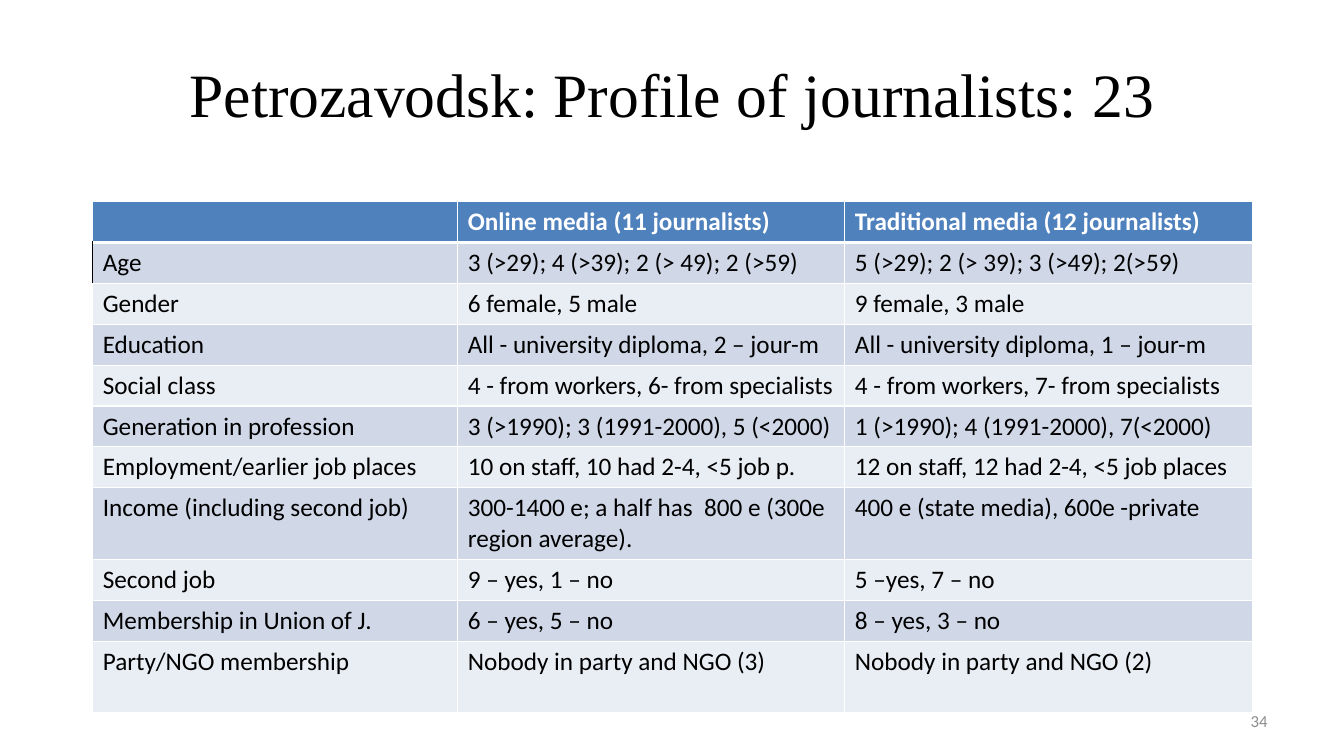
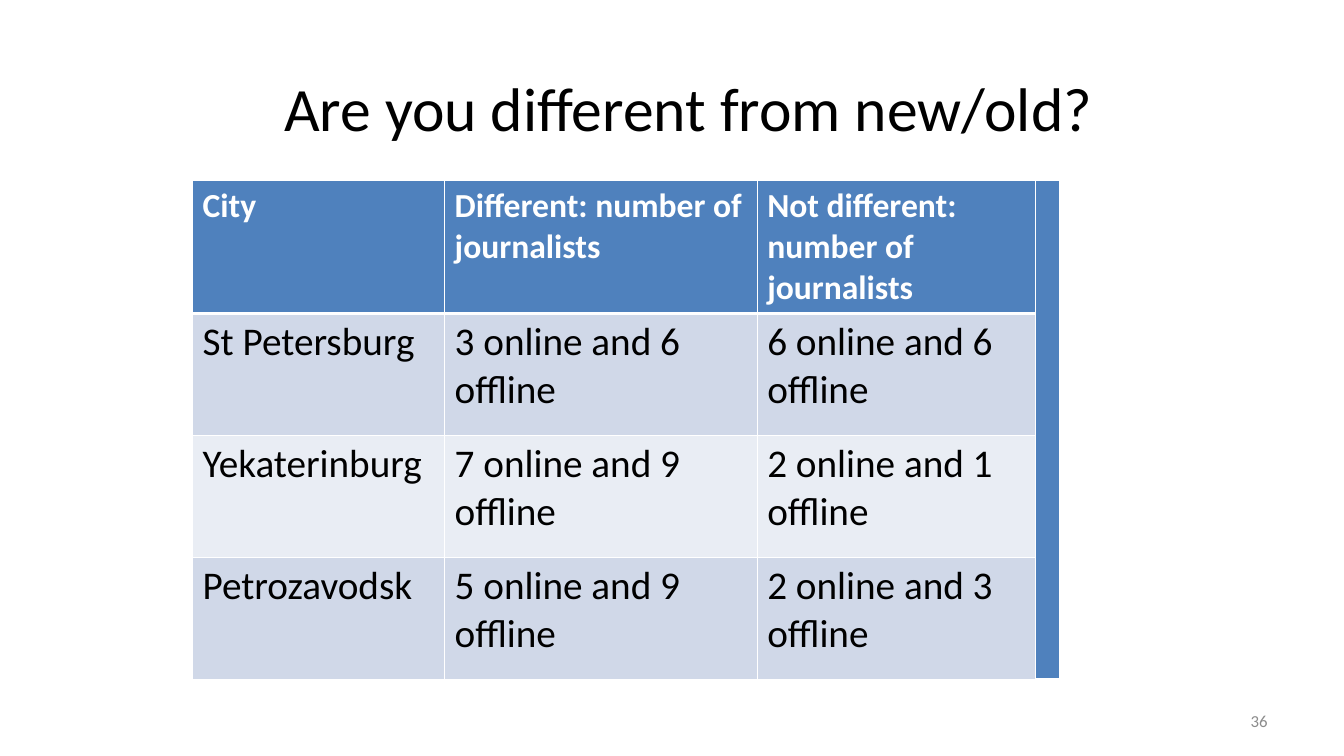
import pptx
import pptx.util
import pptx.dml.color
import pptx.enum.text
import pptx.oxml.ns
from lxml import etree

RGB = pptx.dml.color.RGBColor
ALIGN = pptx.enum.text.PP_ALIGN
WHITE = RGB(0xFF, 0xFF, 0xFF)
BLACK = RGB(0x00, 0x00, 0x00)
GREY = RGB(0x8C, 0x8C, 0x8C)
HEAD = RGB(0x4F, 0x81, 0xBD)
BANDS = [RGB(0xD0, 0xD8, 0xE8), RGB(0xE9, 0xED, 0xF4)]
PX = 9144  # 100 px to the inch
FONT = "Calibri"

# Content
SLIDES = [
    {
        "title": "Petrozavodsk: Profile of journalists: 23",
        "font": "Times New Roman",
        "title_at": (67, 30, 1200, 125),
        "table_at": (92, 200),
        "cols": [362, 384, 404],
        "heights": [40] * 7 + [71, 40, 40, 71],
        "sizes": (18, 18),
        "dark_left": (1, 0),
        "number": "34",
        "rows": [
            ("", "Online media (11 journalists)", "Traditional media (12 journalists)"),
            ("Age", "3 (>29); 4 (>39); 2 (> 49); 2 (>59)", "5 (>29); 2 (> 39); 3 (>49); 2(>59)"),
            ("Gender", "6 female, 5 male", "9 female, 3 male"),
            ("Education", "All - university diploma, 2 – jour-m", "All - university diploma, 1 – jour-m"),
            ("Social class", "4 - from workers, 6- from specialists", "4 - from workers, 7- from specialists"),
            ("Generation in profession", "3 (>1990); 3 (1991-2000), 5 (<2000)", "1 (>1990); 4 (1991-2000), 7(<2000)"),
            ("Employment/earlier job places", "10 on staff, 10 had 2-4, <5 job p.", "12 on staff, 12 had 2-4, <5 job places"),
            ("Income (including second job)", "300-1400 e; a half has  800 e (300e region average).", "400 e (state media), 600e -private"),
            ("Second job", "9 – yes, 1 – no", "5 –yes, 7 – no"),
            ("Membership in Union of J.", "6 – yes, 5 – no", "8 – yes, 3 – no"),
            ("Party/NGO membership", "Nobody in party and NGO (3)", "Nobody in party and NGO (2)"),
        ],
    },
    {
        "title": "Are you different from new/old?",
        "font": FONT,
        "title_at": (83, 44, 1200, 125),
        "table_at": (191, 179),
        "cols": [250, 310, 276, 24],
        "heights": [132, 121, 121, 121],
        "sizes": (24, 28),
        "merge": ((0, 3), (3, 3)),
        "number": "36",
        "rows": [
            ("City", "Different: number of journalists", "Not different: number of journalists"),
            ("St Petersburg", "3 online and 6 offline", "6 online and 6 offline"),
            ("Yekaterinburg", "7 online and 9 offline", "2 online and 1 offline"),
            ("Petrozavodsk", "5 online and 9 offline", "2 online and 3 offline"),
        ],
    },
]


def px(*sizes):
    return [size * PX for size in sizes]


def write(frame, text, align, size, color, name=FONT, bold=False):
    par = frame.paragraphs[0]
    par.text, par.alignment = text, align
    look = {"size": pptx.util.Pt(size), "name": name, "bold": bold}
    for key, value in look.items():
        setattr(par.font, key, value)
    par.font.color.rgb = color


def edge(cell, sides):
    """Draw cell borders; sides maps L, R, T, B to (colour, points)."""
    props = cell._tc.get_or_add_tcPr()
    qn = pptx.oxml.ns.qn
    for spot, side in enumerate("LRTB"):
        color, width = sides[side]
        line = etree.Element(qn("a:ln" + side), w=str(pptx.util.Pt(width)))
        fill = etree.SubElement(line, qn("a:solidFill"))
        etree.SubElement(fill, qn("a:srgbClr"), val=str(color))
        props.insert(spot, line)


def add_grid(slide, data):
    cols, heights = data["cols"], data["heights"]
    box = px(*data["table_at"], sum(cols), sum(heights))
    grid = slide.shapes.add_table(len(heights), len(cols), *box).table
    for col, width in zip(grid.columns, px(*cols)):
        col.width = width
    for row, height in zip(grid.rows, px(*heights)):
        row.height = height
    if "merge" in data:
        first, last = data["merge"]
        grid.cell(*first).merge(grid.cell(*last))

    for r in range(len(heights)):
        head = r == 0
        for c in range(len(cols)):
            cell = grid.cell(r, c)
            if cell.is_spanned:
                continue
            cell.fill.solid()
            cell.fill.fore_color.rgb = HEAD if head else BANDS[(r - 1) % 2]
            left = BLACK if data.get("dark_left") == (r, c) else WHITE
            edge(cell, {
                "L": (left, 1),
                "R": (WHITE, 1),
                "T": (WHITE, 3 if r == 1 else 1),
                "B": (WHITE, 3 if head else 1),
            })
            texts = data["rows"][r]
            if c < len(texts) and texts[c]:
                write(cell.text_frame, texts[c], ALIGN.LEFT,
                      data["sizes"][0 if head else 1],
                      WHITE if head else BLACK, bold=head)


def place_title(slide, data):
    title = slide.shapes.title
    title.left, title.top, title.width, title.height = px(*data["title_at"])
    title.text_frame.vertical_anchor = pptx.enum.text.MSO_ANCHOR.MIDDLE
    write(title.text_frame, data["title"], ALIGN.CENTER, 44, BLACK, data["font"])


def add_number(slide, text):
    frame = slide.shapes.add_textbox(*px(956, 695, 311, 40)).text_frame
    frame.word_wrap = True
    frame.vertical_anchor = pptx.enum.text.MSO_ANCHOR.MIDDLE
    write(frame, text, ALIGN.RIGHT, 12, GREY)


def main():
    deck = pptx.Presentation()
    deck.slide_width, deck.slide_height = px(1333, 750)
    for data in SLIDES:
        slide = deck.slides.add_slide(deck.slide_layouts[5])  # title only
        place_title(slide, data)
        add_grid(slide, data)
        add_number(slide, data["number"])
    deck.save("out.pptx")


if __name__ == "__main__":
    main()
